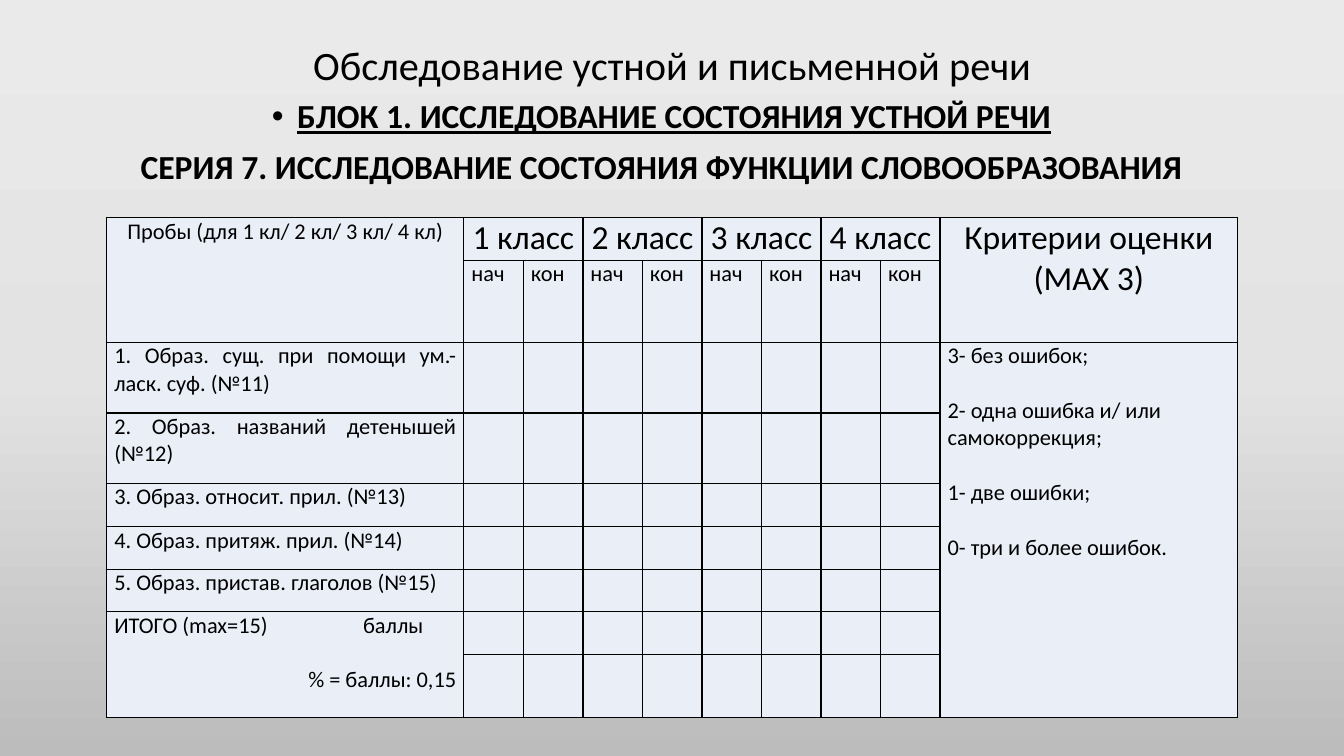
from copy import deepcopy

from lxml import etree
from pptx import Presentation, util as u
from pptx.dml.color import RGBColor
from pptx.enum import text as t
from pptx.oxml import ns

FONT, INK, CELL_FILL = "Calibri", "000000", "EAEFF7"
BACKDROP = [(0, "EBEAEA"), (0.5, "E4E3E3"), (1, "BDBCBC")]

HEADING = "Обследование устной и письменной речи"
BLOCK = "БЛОК 1. ИССЛЕДОВАНИЕ СОСТОЯНИЯ УСТНОЙ РЕЧИ"
SERIES = "СЕРИЯ 7. ИССЛЕДОВАНИЕ СОСТОЯНИЯ ФУНКЦИИ СЛОВООБРАЗОВАНИЯ"

PROBES_HEAD = "Пробы (для 1 кл/ 2 кл/ 3 кл/ 4 кл)"
GRADES = ["1 класс", "2 класс", "3 класс", "4 класс"]
PERIODS = ["нач", "кон"]
CRITERIA_HEAD = "Критерии оценки (MAX 3)"
PROBES = [
    "1. Образ. сущ. при помощи ум.-ласк. суф. (№11)",
    "2. Образ. названий детенышей (№12)",
    "3. Образ. относит. прил. (№13)",
    "4. Образ. притяж. прил. (№14)",
    "5. Образ. пристав. глаголов (№15)",
]
TOTAL = "ИТОГО (max=15)\tбаллы"
PERCENT = "% = баллы: 0,15"
CRITERIA = [
    "3- без ошибок;",
    "2- одна ошибка и/ или самокоррекция;",
    "1- две ошибки;",
    "0- три и более ошибок.",
]

COLUMNS = [9] + [1.5] * len(GRADES) * len(PERIODS) + [7.5]
ROWS = [1.07, 2.06, 1.78, 1.78, 1.09, 1.07, 1.07, 1.07, 1.6]
LINE_GAP = 19.5
LEFT, CENTER, RIGHT, JUSTIFY = (
    t.PP_ALIGN.LEFT, t.PP_ALIGN.CENTER, t.PP_ALIGN.RIGHT, t.PP_ALIGN.JUSTIFY)


def rgb(value):
    return RGBColor.from_string(value)


def write(frame, text, size=16, align=JUSTIFY, bold=False, underline=False,
          before=0, spacing=None):
    paragraph = frame.paragraphs[0]
    if paragraph.runs:
        paragraph = frame.add_paragraph()
    paragraph.alignment = align
    paragraph.space_before = u.Pt(before)
    paragraph.line_spacing = spacing
    run = paragraph.add_run()
    run.text = text
    font = run.font
    font.name, font.size, font.bold, font.underline = FONT, u.Pt(size), bold, underline
    font.color.rgb = rgb(INK)
    return paragraph._p.get_or_add_pPr()


def place(holder, left, top, width, height):
    holder.left, holder.top = u.Cm(left), u.Cm(top)
    holder.width, holder.height = u.Cm(width), u.Cm(height)
    holder.text_frame.auto_size = t.MSO_AUTO_SIZE.NONE
    return holder.text_frame


def style_cell(cell):
    cell.margin_left = cell.margin_right = u.Cm(0.19)
    cell.margin_top = cell.margin_bottom = 0
    properties = cell._tc.get_or_add_tcPr()
    for side in ("a:lnL", "a:lnR", "a:lnT", "a:lnB"):
        border = etree.SubElement(properties, ns.qn(side), w=str(u.Pt(1)))
        ink = etree.SubElement(border, ns.qn("a:solidFill"))
        etree.SubElement(ink, ns.qn("a:srgbClr"), val=INK)
    cell.fill.solid()
    cell.fill.fore_color.rgb = rgb(CELL_FILL)


def paint_backdrop(slide):
    fill = slide.background.fill
    fill.gradient()
    fill.gradient_angle = 270
    stops = next(slide._element.iter(ns.qn("a:gsLst")))
    stops.append(deepcopy(stops[0]))
    for stop, (position, color) in zip(fill.gradient_stops, BACKDROP):
        stop.position = position
        stop.color.rgb = rgb(color)


def add_headings(slide):
    heading = place(slide.shapes.title, 2.34, 1.02, 29.21, 1.37)
    heading.vertical_anchor = t.MSO_ANCHOR.MIDDLE
    write(heading, HEADING, size=28.8, align=CENTER, spacing=0.9)

    subtitles = place(slide.placeholders[1], 1.8, 2.39, 29.74, 14.78)
    style = dict(size=24, align=CENTER, bold=True, before=10, spacing=0.9)
    block = write(subtitles, BLOCK, underline=True, **style)
    block.set("marL", str(u.Cm(0.64)))
    block.set("indent", str(u.Cm(-0.64)))
    etree.SubElement(block, ns.qn("a:buChar"), char="•")
    series = write(subtitles, SERIES, **style)
    series.set("marL", "0")
    series.set("indent", "0")
    etree.SubElement(series, ns.qn("a:buNone"))


def add_scores(slide):
    scores = slide.shapes.add_table(
        len(ROWS), len(COLUMNS), u.Cm(2.69), u.Cm(5.49),
        u.Cm(sum(COLUMNS)), u.Cm(sum(ROWS))).table
    scores.first_row = scores.horz_banding = False
    for column, width in zip(scores.columns, COLUMNS):
        column.width = u.Cm(width)
    for row, height in zip(scores.rows, ROWS):
        row.height = u.Cm(height)
    for cell in scores.iter_cells():
        style_cell(cell)

    last_row, last_column = len(ROWS) - 1, len(COLUMNS) - 1
    total_row = last_row - 1

    def frame(row, column, end_row=None, end_column=None):
        cell = scores.cell(row, column)
        if end_row is not None:
            cell.merge(scores.cell(end_row, end_column))
        return cell.text_frame

    write(frame(0, 0, 1, 0), PROBES_HEAD, align=CENTER)
    write(frame(0, last_column, 1, last_column), CRITERIA_HEAD, size=24, align=CENTER)
    for number, grade in enumerate(GRADES):
        first = 1 + number * len(PERIODS)
        write(frame(0, first, 0, first + len(PERIODS) - 1), grade, size=24, align=CENTER)
        for column, period in enumerate(PERIODS, first):
            write(frame(1, column), period)
    for row, probe in enumerate(PROBES, 2):
        write(frame(row, 0), probe)

    totals = frame(total_row, 0, last_row, 0)
    tabs = etree.SubElement(write(totals, TOTAL, align=LEFT), ns.qn("a:tabLst"))
    etree.SubElement(tabs, ns.qn("a:tab"), pos=str(u.Cm(6.27)), algn="l")
    write(totals, PERCENT, align=RIGHT, before=LINE_GAP)

    criteria = frame(2, last_column, last_row, last_column)
    for number, criterion in enumerate(CRITERIA):
        write(criteria, criterion, align=LEFT, before=LINE_GAP if number else 0)


def main():
    deck = Presentation()
    deck.slide_width, deck.slide_height = u.Cm(33.87), u.Cm(19.05)
    slide = deck.slides.add_slide(deck.slide_layouts[1])
    paint_backdrop(slide)
    add_headings(slide)
    add_scores(slide)
    deck.save("out.pptx")


if __name__ == "__main__":
    main()
